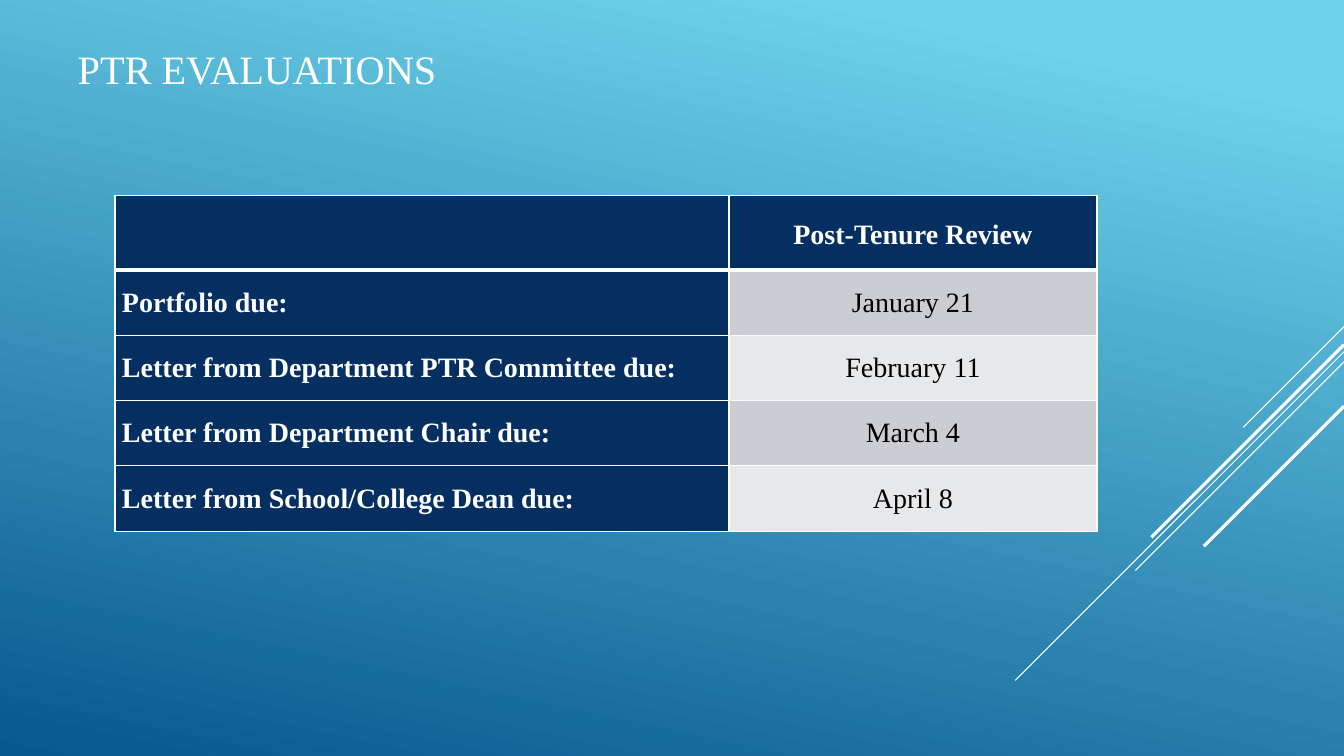
import pptx
import pptx.dml.color
import pptx.enum.shapes
import pptx.enum.text
import pptx.oxml
import pptx.oxml.ns
import pptx.util
from pptx.util import Inches

COLORS = {
    "sky": "6ED2EB",
    "ocean": "06588E",
    "navy": "052F61",
    "band_dark": "CCCDD2",
    "band_light": "E7E8EA",
    "white": "FFFFFF",
    "black": "000000",
}
FONT = "Times New Roman"
DEADLINES = [
    ("", "Post-Tenure Review"),
    ("Portfolio due:", "January 21"),
    ("Letter from Department PTR Committee due:", "February 11"),
    ("Letter from Department Chair due:", "March 4"),
    ("Letter from School/College Dean due:", "April 8"),
]
STREAKS = [
    (3.24, 1.0, 0.75),
    (3.49, 3.26, 0.75),
    (3.59, 2.07, 0.75),
    (3.42, 1.91, 2.25),
    (4.03, 1.39, 2.25),
]


def rgb(name):
    """Return the named palette colour."""
    return pptx.dml.color.RGBColor.from_string(COLORS[name])


def set_font(para, size, color, bold=False):
    """Format a paragraph's font."""
    para.font.name = FONT
    para.font.size = pptx.util.Pt(size)
    para.font.bold = bold
    para.font.color.rgb = rgb(color)


def paint_background(page):
    """Fill the page with the sky-to-ocean gradient."""
    fill = page.background.fill
    fill.gradient()
    fill.gradient_angle = 360 - 102
    for stop, color, position in zip(fill.gradient_stops, ("sky", "ocean"), (0.1, 1)):
        stop.color.rgb = rgb(color)
        stop.position = position


def draw_streaks(page, right):
    """Draw the 45-degree streaks running down from the right edge."""
    for top, reach, weight in STREAKS:
        streak = page.shapes.add_connector(
            pptx.enum.shapes.MSO_CONNECTOR.STRAIGHT,
            Inches(right), Inches(top), Inches(right - reach), Inches(top + reach))
        streak.line.color.rgb = rgb("white")
        streak.line.width = pptx.util.Pt(weight)
        properties = streak.element.find(pptx.oxml.ns.qn("p:spPr"))
        properties.append(pptx.oxml.parse_xml(
            f"<a:effectLst {pptx.oxml.ns.nsdecls('a')}/>"))


def place_title(page, left, top, width, height):
    """Place and format the title in the given box."""
    title = page.shapes.title
    title.left, title.top = Inches(left), Inches(top)
    title.width, title.height = Inches(width), Inches(height)
    frame = title.text_frame
    frame.text = "PTR EVALUATIONS"
    frame.auto_size = pptx.enum.text.MSO_AUTO_SIZE.NONE
    frame.vertical_anchor = pptx.enum.text.MSO_ANCHOR.MIDDLE
    frame.paragraphs[0].alignment = pptx.enum.text.PP_ALIGN.LEFT
    set_font(frame.paragraphs[0], 28.8, "white")


def set_borders(cell, weights):
    """Give a cell white borders with a weight in points for each side."""
    properties = cell._tc.get_or_add_tcPr()
    for side, weight in weights.items():
        properties.append(pptx.oxml.parse_xml(
            f'<a:ln{side} {pptx.oxml.ns.nsdecls("a")} w="{pptx.util.Pt(weight)}">'
            f'<a:solidFill><a:srgbClr val="{COLORS["white"]}"/></a:solidFill>'
            f"</a:ln{side}>"))


def format_cell(cell, text, row, column):
    """Write and style one cell according to its row and column."""
    is_heading = row == 0 or column == 0
    set_borders(cell, {"L": 1, "R": 1, "T": 3 if row == 1 else 1, "B": 3 if row == 0 else 1})
    cell.fill.solid()
    band = "band_dark" if row % 2 else "band_light"
    cell.fill.fore_color.rgb = rgb("navy" if is_heading else band)
    cell.margin_left = cell.margin_right = Inches(0.07)
    cell.margin_top = cell.margin_bottom = 0
    cell.vertical_anchor = pptx.enum.text.MSO_ANCHOR.MIDDLE
    cell.text = text
    para = cell.text_frame.paragraphs[0]
    set_font(para, 20, "white" if is_heading else "black", is_heading)
    if column:
        para.alignment = pptx.enum.text.PP_ALIGN.CENTER
    if row:
        para.space_before = para.space_after = pptx.util.Pt(6)
    else:
        para.line_spacing = 1.15


def place_deadlines(page, left, top, width, height):
    """Place the table of deadlines in the given box."""
    header_height, label_width = 0.74, 6.09
    table = page.shapes.add_table(
        len(DEADLINES), 2, Inches(left), Inches(top), Inches(width), Inches(height)).table
    table.first_col = True
    table.horz_banding = False
    table.columns[0].width = Inches(label_width)
    table.columns[1].width = Inches(width - label_width)
    row_height = (height - header_height) / (len(DEADLINES) - 1)
    for row, texts in enumerate(DEADLINES):
        table.rows[row].height = Inches(row_height if row else header_height)
        for column, text in enumerate(texts):
            format_cell(table.cell(row, column), text, row, column)


def main():
    """Build and save the deck."""
    deck = pptx.Presentation()
    deck.slide_width, deck.slide_height = Inches(13.33), Inches(7.5)
    page = deck.slides.add_slide(deck.slide_layouts.get_by_name("Title Only"))
    paint_background(page)
    draw_streaks(page, 13.33)
    place_title(page, 0.67, 0.39, 11, 0.58)
    place_deadlines(page, 1.14, 1.94, 9.74, 3.33)
    deck.save("out.pptx")


if __name__ == "__main__":
    main()
